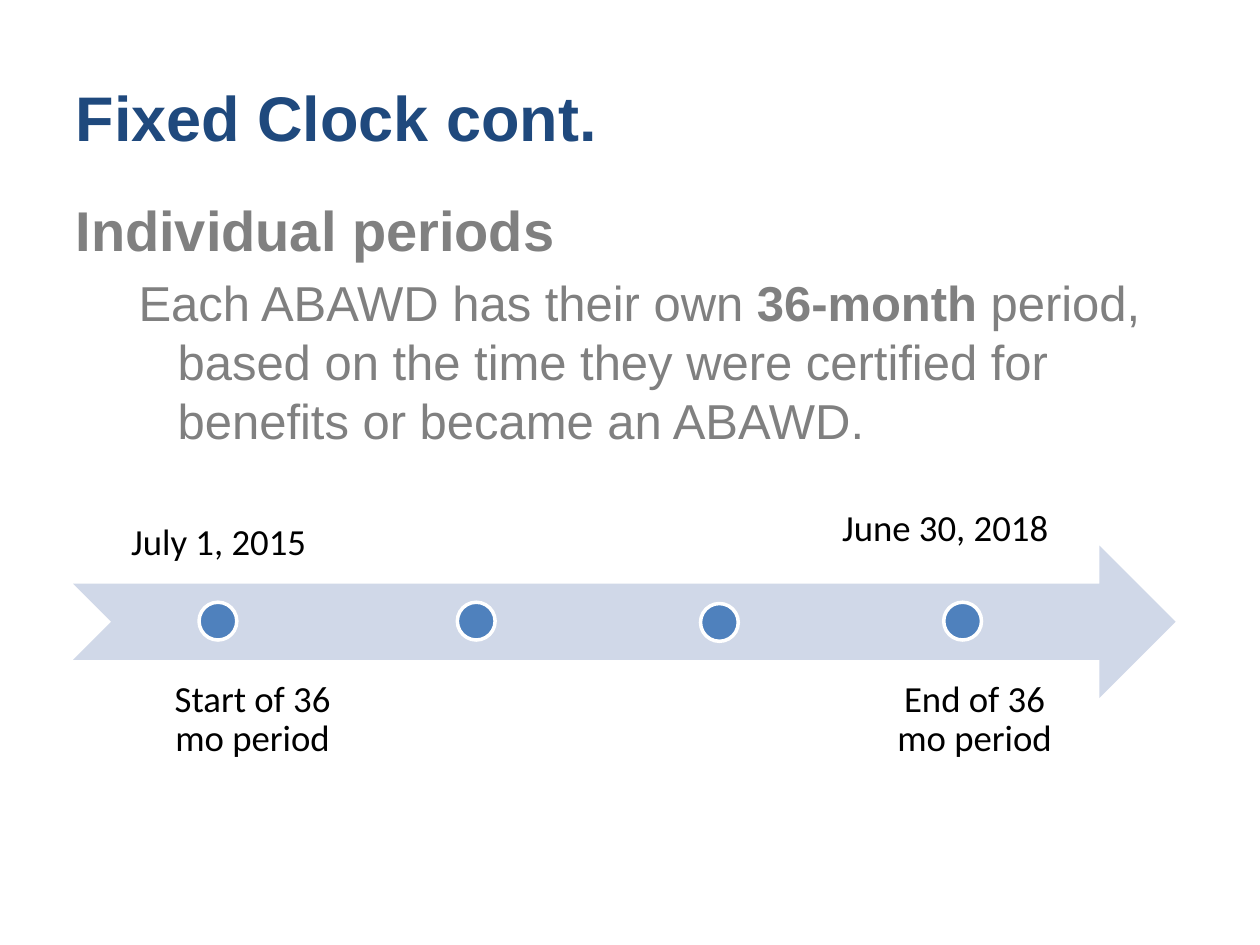
from lxml import etree
from pptx import Presentation
from pptx import util as u
from pptx.dml.color import RGBColor
from pptx.enum import shapes, text
from pptx.oxml.ns import qn

NAVY = RGBColor(0x1F, 0x49, 0x7D)
GRAY = RGBColor(0x80, 0x80, 0x80)
BLACK = RGBColor(0, 0, 0)
WHITE = RGBColor(255, 255, 255)
PALE_BLUE = RGBColor(0xD0, 0xD8, 0xE8)
BLUE = RGBColor(0x4F, 0x81, 0xBD)


class SlideBuilder:
    """Holds the style and the current slide."""

    heading_font = "Arial"
    label_font = "Calibri"
    label_size = 21
    label_inset = u.Inches(0.16)
    dot_size = 0.3

    def __init__(self, slide):
        self.slide = slide

    def place(self, item, left, top, width, height):
        item.left, item.top = u.Inches(left), u.Inches(top)
        item.width, item.height = u.Inches(width), u.Inches(height)

    def run(self, paragraph, words, size, font, color, bold=False):
        run = paragraph.add_run()
        run.text = words
        run.font.size = u.Pt(size)
        run.font.name = font
        run.font.bold = bold
        run.font.color.rgb = color

    def title(self, words, *box):
        heading = self.slide.shapes.title
        self.place(heading, *box)
        heading.text_frame.vertical_anchor = text.MSO_ANCHOR.MIDDLE
        paragraph = heading.text_frame.paragraphs[0]
        paragraph.alignment = text.PP_ALIGN.LEFT
        self.run(paragraph, words, 36, self.heading_font, NAVY, True)

    def body(self, items, *box):
        """Each item: level, left margin, hanging indent, size, (words, bold) runs."""
        outline = self.slide.placeholders[1]
        self.place(outline, *box)
        frame = outline.text_frame
        frame.auto_size = text.MSO_AUTO_SIZE.NONE
        for i, (level, margin, hanging, size, runs) in enumerate(items):
            paragraph = frame.add_paragraph() if i else frame.paragraphs[0]
            paragraph.level = level
            properties = paragraph._p.get_or_add_pPr()
            properties.set("marL", str(u.Inches(margin)))
            properties.set("indent", str(-u.Inches(hanging)))
            etree.SubElement(properties, qn("a:buNone"))
            if i == 0:
                paragraph.space_before = u.Pt(0)
            for words, bold in runs:
                self.run(paragraph, words, size, self.heading_font, GRAY, bold)

    def shape(self, kind, fill, *box, outline=None):
        item = self.slide.shapes.add_shape(kind, *map(u.Inches, box))
        item.shadow.inherit = False
        item.fill.solid()
        item.fill.fore_color.rgb = fill
        if outline is None:
            item.line.fill.background()
        else:
            item.line.color.rgb = outline
            item.line.width = u.Pt(2)

    def dot(self, left, top):
        self.shape(shapes.MSO_SHAPE.OVAL, BLUE, left, top,
                   self.dot_size, self.dot_size, outline=WHITE)

    def label(self, words, anchor, align, *box):
        frame = self.slide.shapes.add_textbox(*map(u.Inches, box)).text_frame
        frame.word_wrap = True
        frame.vertical_anchor = anchor
        frame.margin_left = frame.margin_right = self.label_inset
        frame.margin_top = frame.margin_bottom = self.label_inset
        paragraph = frame.paragraphs[0]
        paragraph.alignment = align
        paragraph.line_spacing = 0.9
        self.run(paragraph, words, self.label_size, self.label_font, BLACK)


def main():
    deck = Presentation()
    deck.slide_width, deck.slide_height = u.Inches(10), u.Inches(7.5)
    builder = SlideBuilder(deck.slides.add_slide(deck.slide_layouts[1]))

    # Heading and explanation
    builder.title("Fixed Clock cont.", 0.5, 0.3, 9, 1.25)
    builder.body([
        (0, 0.38, 0.38, 32, [("Individual periods", True)]),
        (1, 0.81, 0.31, 28, [
            ("Each ABAWD has their own ", False),
            ("36-month ", True),
            ("period, based on the time they were certified for benefits "
             "or became an ABAWD.", False),
        ]),
    ], 0.5, 1.5, 9, 5.2)

    # Timeline arrow and its milestones
    builder.shape(shapes.MSO_SHAPE.NOTCHED_RIGHT_ARROW, PALE_BLUE,
                  0.58, 4.33, 8.75, 1.21)
    for left, top in ((1.58, 4.78), (3.63, 4.78), (5.56, 4.79), (7.49, 4.78)):
        builder.dot(left, top)

    # Dates above the arrow
    anchor, align = text.MSO_ANCHOR, text.PP_ALIGN
    builder.label("July 1, 2015", anchor.BOTTOM, align.CENTER,
                  0.59, 3.42, 2.29, 1.21)
    builder.label("June 30, 2018", anchor.MIDDLE, align.RIGHT,
                  6.41, 3.58, 2.07, 1.25)

    # Meanings below the arrow
    for words, left in (("Start of 36 mo period", 1.19),
                        ("End of 36 mo period", 6.92)):
        builder.label(words, anchor.TOP, align.CENTER, left, 5.24, 1.63, 1.21)

    deck.save("out.pptx")


if __name__ == "__main__":
    main()
